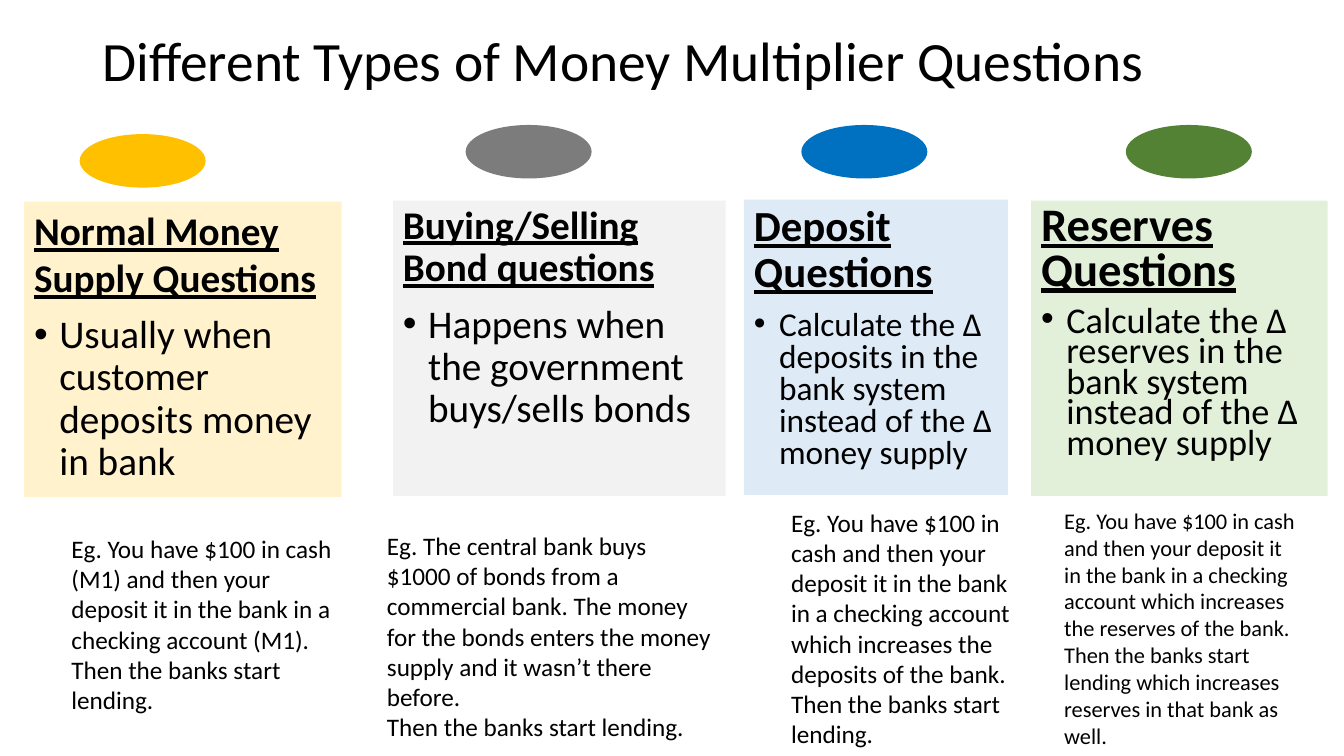
from dataclasses import dataclass

import pptx
import pptx.dml.color
import pptx.enum.shapes
import pptx.enum.text
import pptx.oxml.ns
import pptx.util
from lxml import etree

Pt = pptx.util.Pt
Box = tuple[float, float, float, float]

FONT = "Calibri"
COLORS = {
    "text": "000000",
    "gold": "FFC000", "cream": "FFF2CC",
    "grey": "7C7C7C", "pale grey": "F2F2F2",
    "blue": "0070C0", "pale blue": "DEEBF7",
    "green": "548235", "pale green": "E2F0D9",
}
PANEL_HEIGHT = 211
MARKER_WIDTH, MARKER_HEIGHT = 90, 38.2
BULLET_INDENT = 18


@dataclass(frozen=True)
class TextStyle:
    size: float
    spacing: float = 1.0
    bold: bool = False


@dataclass(frozen=True)
class QuestionType:
    heading: str
    heading_style: TextStyle
    point: str
    point_style: TextStyle
    panel: tuple[float, float, float]  # left, top, width
    panel_color: str
    marker: tuple[float, float]  # left, top
    marker_color: str
    example: tuple[str, str]
    example_box: Box
    example_size: float


QUESTION_TYPES = [
    QuestionType(
        "Normal Money Supply Questions", TextStyle(28, bold=True),
        "Usually when customer deposits money in bank", TextStyle(28, 0.9),
        (17.3, 144, 226.8), "cream", (56.9, 95.8), "gold",
        ("Eg. You have $100 in cash (M1) and then your deposit it in the bank "
         "in a checking account (M1).", "Then the banks start lending."),
        (43.9, 377.3, 209.5, 138.2), 18),
    QuestionType(
        "Buying/Selling Bond questions", TextStyle(28, 0.9, bold=True),
        "Happens when the government buys/sells bonds", TextStyle(28, 0.9),
        (280.8, 143.3, 237.6), "pale grey", (332.6, 89.3), "grey",
        ("Eg. The central bank buys $1000 of bonds from a commercial bank. The "
         "money for the bonds enters the money supply and it wasn’t there before.",
         "Then the banks start lending."),
        (269.3, 375.1, 248.4, 159.8), 18),
    QuestionType(
        "Deposit Questions", TextStyle(30.6, 0.9, bold=True),
        "Calculate the ∆ deposits in the bank system instead of the ∆ money supply",
        TextStyle(23.8, 0.8),
        (531.4, 142.6, 188.6), "pale blue", (572.4, 89.3), "blue",
        ("Eg. You have $100 in cash and then your deposit it in the bank in a "
         "checking account which increases the deposits of the bank.",
         "Then the banks start lending."),
        (558, 358.6, 184.3, 181.4), 18),
    QuestionType(
        "Reserves Questions", TextStyle(33.3, 0.8, bold=True),
        "Calculate the ∆ reserves in the bank system instead of the ∆ money supply",
        TextStyle(25.9, 0.7),
        (736.6, 143.3, 211.7), "pale green", (804.2, 89.3), "green",
        ("Eg. You have $100 in cash and then your deposit it in the bank in a "
         "checking account which increases the reserves of the bank.",
         "Then the banks start lending which increases reserves in that bank as well."),
        (753.1, 358.6, 184.3, 181.4), 16),
]


def rgb(name: str) -> pptx.dml.color.RGBColor:
    return pptx.dml.color.RGBColor.from_string(COLORS[name])


def add_filled_shape(slide, kind, box: Box, color: str):
    shape = slide.shapes.add_shape(kind, *map(Pt, box))
    shape.shadow.inherit = False
    shape.fill.solid()
    shape.fill.fore_color.rgb = rgb(color)
    shape.line.fill.background()
    return shape


def write(paragraph, text: str, style: TextStyle) -> None:
    paragraph.text = text
    paragraph.alignment = pptx.enum.text.PP_ALIGN.LEFT
    paragraph.line_spacing = style.spacing
    font = paragraph.font
    font.name = FONT
    font.size = Pt(style.size)
    font.bold = style.bold
    font.color.rgb = rgb("text")


def add_bullet(paragraph) -> None:
    properties = paragraph._p.get_or_add_pPr()
    properties.set("marL", str(int(Pt(BULLET_INDENT))))
    properties.set("indent", str(-int(Pt(BULLET_INDENT))))
    etree.SubElement(properties, pptx.oxml.ns.qn("a:buFont"), typeface="Arial")
    etree.SubElement(properties, pptx.oxml.ns.qn("a:buChar"), char="•")


def add_text_box(slide, box: Box, texts: tuple[str, ...], style: TextStyle):
    frame = slide.shapes.add_textbox(*map(Pt, box)).text_frame
    frame.word_wrap = True
    for index, text in enumerate(texts):
        paragraph = frame.add_paragraph() if index else frame.paragraphs[0]
        write(paragraph, text, style)
    return frame


def add_panel(slide, question: QuestionType) -> None:
    panel = add_filled_shape(slide, pptx.enum.shapes.MSO_SHAPE.RECTANGLE,
                             (*question.panel, PANEL_HEIGHT), question.panel_color)
    frame = panel.text_frame
    frame.word_wrap = True
    frame.vertical_anchor = pptx.enum.text.MSO_ANCHOR.TOP
    heading = frame.paragraphs[0]
    write(heading, question.heading, question.heading_style)
    heading.font.underline = True
    point = frame.add_paragraph()
    add_bullet(point)
    write(point, question.point, question.point_style)
    point.space_before = Pt(10)


def add_question_type(slide, question: QuestionType) -> None:
    """Draw one column: marker, panel and worked example."""
    add_panel(slide, question)
    add_filled_shape(slide, pptx.enum.shapes.MSO_SHAPE.OVAL,
                     (*question.marker, MARKER_WIDTH, MARKER_HEIGHT),
                     question.marker_color)
    add_text_box(slide, question.example_box, question.example,
                 TextStyle(question.example_size))


def main() -> None:
    presentation = pptx.Presentation()
    presentation.slide_width, presentation.slide_height = Pt(960), Pt(540)
    slide = presentation.slides.add_slide(presentation.slide_layouts[6])
    title = add_text_box(slide, (66.2, 18.7, 828, 54),
                         ("Different Types of Money Multiplier Questions",),
                         TextStyle(39.6, 0.9))
    title.vertical_anchor = pptx.enum.text.MSO_ANCHOR.MIDDLE
    for question in QUESTION_TYPES:
        add_question_type(slide, question)
    presentation.save("out.pptx")


if __name__ == "__main__":
    main()
